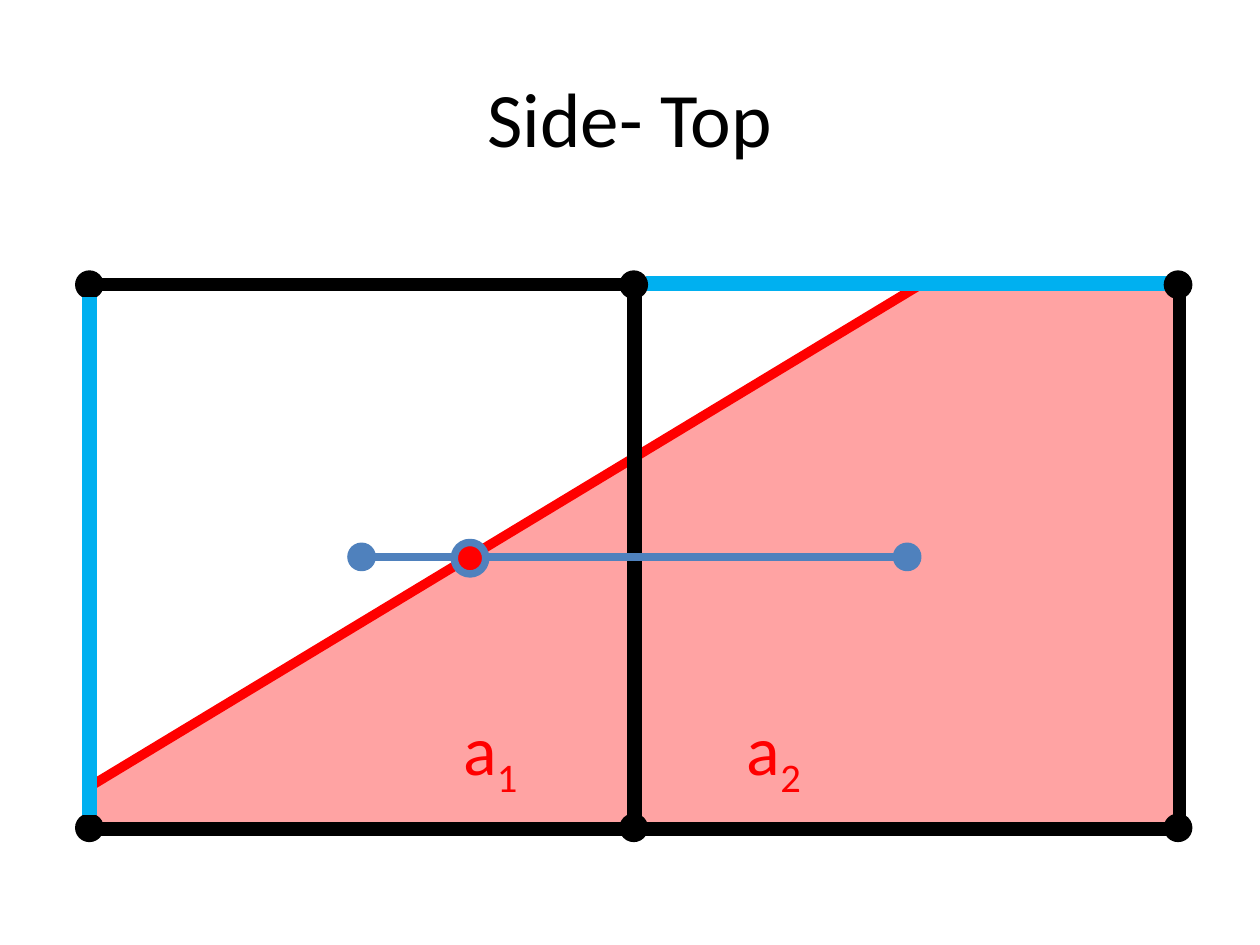
import pptx
import pptx.util
from lxml import etree
from pptx.dml.color import RGBColor
from pptx.enum.shapes import MSO_CONNECTOR, MSO_SHAPE
from pptx.enum.text import MSO_ANCHOR, PP_ALIGN
from pptx.oxml.ns import qn
from pptx.util import Inches

COLORS = {
    "text": "000000",
    "grid": "000000",
    "region": "FFA3A3",
    "interface": "FF0000",
    "cut_edge": "00B0F0",
    "center": "4F81BD",
}
FONT = "Calibri"
CELL = 4.4
CELL_STEP = 4.33
NODE = 0.2


def color(name):
    return RGBColor.from_string(COLORS[name])


def add_solid(slide, kind, box, fill, line=None, line_width=2):
    solid = slide.shapes.add_shape(kind, *map(Inches, box))
    solid.shadow.inherit = False
    solid.fill.solid()
    solid.fill.fore_color.rgb = color(fill)
    solid.line.color.rgb = color(line or fill)
    solid.line.width = pptx.util.Pt(line_width)
    return solid


def add_dot(slide, x, y, size, fill, line=None, line_width=2):
    """Place a round dot by its centre."""
    box = (x - size / 2, y - size / 2, size, size)
    add_solid(slide, MSO_SHAPE.OVAL, box, fill, line, line_width)


def add_line(slide, start, end, line, width):
    connector = slide.shapes.add_connector(
        MSO_CONNECTOR.STRAIGHT, *map(Inches, (*start, *end)))
    connector.line.color.rgb = color(line)
    connector.line.width = pptx.util.Pt(width)
    etree.SubElement(connector.element.spPr, qn("a:effectLst"))


def style_run(run, size, name):
    run.font.name = FONT
    run.font.size = pptx.util.Pt(size)
    run.font.color.rgb = color(name)


def fill_title(slide, left, top, width, height):
    title = slide.shapes.title
    title.left, title.top = Inches(left), Inches(top)
    title.width, title.height = Inches(width), Inches(height)
    title.text_frame.text = "Side- Top"
    title.text_frame.vertical_anchor = MSO_ANCHOR.MIDDLE
    heading = title.text_frame.paragraphs[0]
    heading.alignment = PP_ALIGN.CENTER
    style_run(heading.runs[0], 44, "text")


def add_region(slide, left, top):
    """Draw the shaded area below the sloping interface, and the interface."""
    slope = add_solid(slide, MSO_SHAPE.RIGHT_TRIANGLE,
                      (left, top + 0.08, 6.58, 4), "region")
    slope.element.spPr.xfrm.set("flipH", "1")
    add_solid(slide, MSO_SHAPE.RECTANGLE,
              (left + 6.58, top + 0.08, 2.08, 4), "region")
    add_solid(slide, MSO_SHAPE.RECTANGLE,
              (left, top + 4, 8.67, 0.33), "region")
    add_line(slide, (left + 0.08, top + 4), (left + 6.65, top + 0.03),
             "interface", 5.5)


def add_cells(slide, left, top):
    for column in range(2):
        cell_left = left + column * CELL_STEP
        cell = add_solid(slide, MSO_SHAPE.FRAME,
                         (cell_left, top, CELL, CELL), "grid")
        cell.adjustments[0] = 0.018
        add_dot(slide, cell_left + CELL / 2, top + CELL / 2, NODE, "center")


def add_nodes_and_cut_edges(slide, left, top):
    add_line(slide, (left + 8.65, top + 0.03), (left + 4.46, top + 0.03),
             "cut_edge", 9)
    for column in range(3):
        for row in range(2):
            add_dot(slide, left + 0.04 + column * 4.32,
                    top + 0.04 + row * 4.31, NODE, "grid")
    add_line(slide, (left + 0.04, top + 0.14), (left + 0.04, top + 4.25),
             "cut_edge", 9)


def add_center_link(slide, left, top):
    """Join the two cell centres and mark where the interface crosses."""
    y = top + CELL / 2
    first = left + CELL / 2
    add_line(slide, (first + NODE / 2, y),
             (first + CELL_STEP - NODE / 2, y), "center", 4.5)
    add_dot(slide, left + 3.06, y + 0.01, 0.25, "interface", "center", 4.25)


def add_area_label(slide, left, top, index):
    label = slide.shapes.add_textbox(
        *map(Inches, (left, top, 0.67, 0.77)))
    label.text_frame.word_wrap = True
    paragraph = label.text_frame.paragraphs[0]
    for text in ("a", index):
        run = paragraph.add_run()
        run.text = text
        style_run(run, 40, "interface")
    run.font._element.set("baseline", "-25000")


def add_diagram(slide, left, top):
    add_region(slide, left, top)
    add_cells(slide, left, top)
    add_nodes_and_cut_edges(slide, left, top)
    add_center_link(slide, left, top)
    for index, offset in (("1", 2.91), ("2", 5.16)):
        add_area_label(slide, left + offset, top + 3.33, index)


def main():
    deck = pptx.Presentation()
    deck.slide_width, deck.slide_height = Inches(10), Inches(7.5)
    slide = deck.slides.add_slide(deck.slide_layouts.get_by_name("Title Only"))
    fill_title(slide, 0.5, 0.3, 9, 1.25)
    add_diagram(slide, 0.67, 2.22)
    deck.save("out.pptx")


if __name__ == "__main__":
    main()
